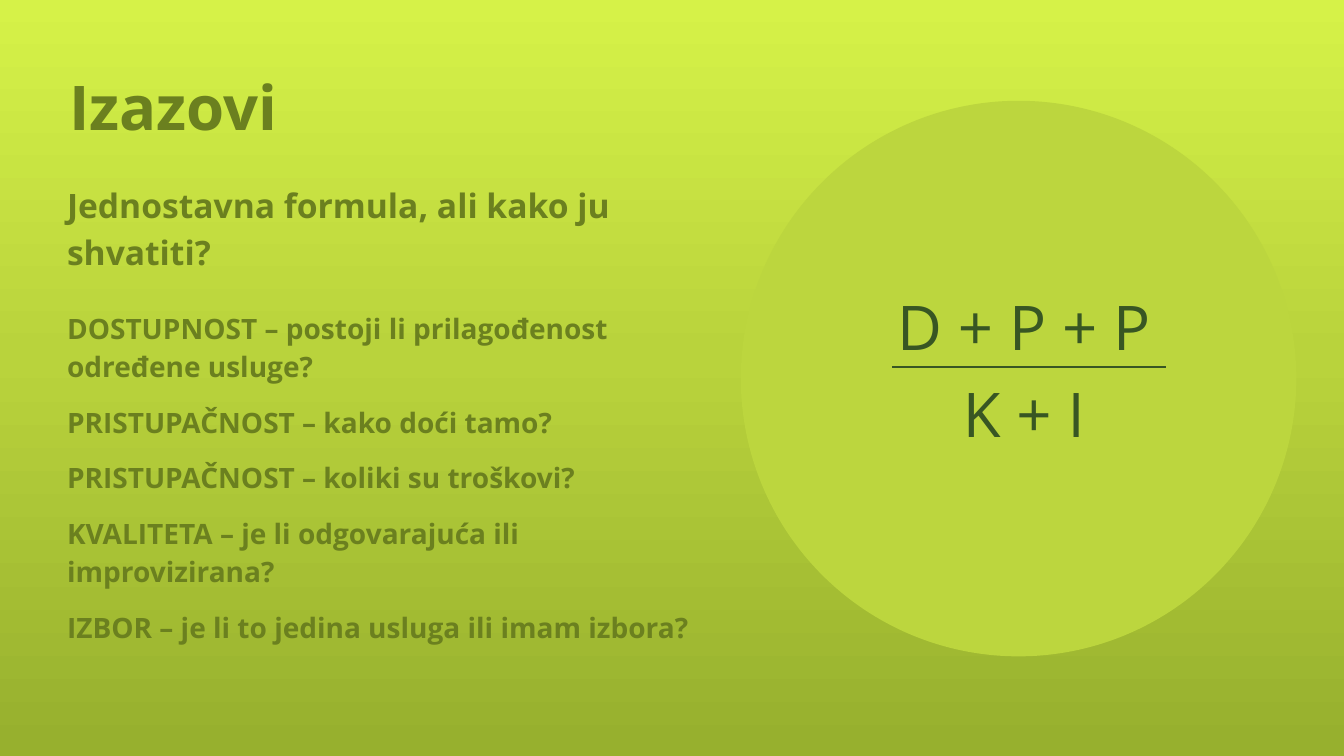
from copy import deepcopy
from dataclasses import dataclass

from lxml.etree import SubElement
from pptx import Presentation
from pptx.dml.color import RGBColor
from pptx.enum.shapes import MSO_CONNECTOR, MSO_SHAPE
from pptx.enum.text import MSO_AUTO_SIZE, PP_ALIGN
from pptx.oxml.ns import qn
from pptx.slide import Slide
from pptx.util import Cm, Pt


@dataclass(frozen=True)
class Theme:
    font: str = "Open Sans"
    olive: RGBColor = RGBColor(0x6B, 0x80, 0x1F)
    forest: RGBColor = RGBColor(0x38, 0x56, 0x23)
    disc: RGBColor = RGBColor(0xBC, 0xD6, 0x3E)
    gradient: tuple[tuple[float, str], ...] = (
        (0, "D6F248"), (0.47, "B9D33C"), (0.99, "97B02E"))
    display_size: int = 44
    question_size: int = 24
    criteria_size: int = 20


THEME = Theme()


@dataclass(frozen=True)
class TextBlock:
    left: float
    top: float
    width: float
    height: float
    lines: tuple[str, ...]
    size: int
    color: RGBColor = THEME.olive
    bold: bool = True
    body: bool = False
    align: PP_ALIGN = PP_ALIGN.LEFT


TITLE = TextBlock(1.5, 1.6, 30.5, 3.78, ("Izazovi",), THEME.display_size)
QUESTION = TextBlock(1.14, 4.39, 14.53, 2.54,
                     ("Jednostavna formula, ali kako ju shvatiti?",),
                     THEME.question_size, body=True)
CRITERIA = TextBlock(1.14, 7.59, 16.56, 8.79, (
    "DOSTUPNOST – postoji li prilagođenost određene usluge?",
    "PRISTUPAČNOST – kako doći tamo?",
    "PRISTUPAČNOST – koliki su troškovi?",
    "KVALITETA – je li odgovarajuća ili improvizirana?",
    "IZBOR – je li to jedina usluga ili imam izbora?",
), THEME.criteria_size, body=True)
NUMERATOR = TextBlock(21.79, 7.16, 8.03, 2.13, ("D + P + P",), THEME.display_size,
                      THEME.forest, bold=False, align=PP_ALIGN.CENTER)
DENOMINATOR = TextBlock(23.52, 9.35, 4.57, 2.13, ("K + I",), THEME.display_size,
                        THEME.forest, bold=False, align=PP_ALIGN.CENTER)


def paint_background(page: Slide) -> None:
    fill = page.background.fill
    fill.gradient()
    fill.gradient_angle = 270
    # The default gradient has two stops; add the middle one
    stop_list = page.element.find(".//" + qn("a:gsLst"))
    stop_list.append(deepcopy(stop_list[0]))
    for stop, (position, color) in zip(fill.gradient_stops, THEME.gradient):
        stop.position = position
        stop.color.rgb = RGBColor.from_string(color)


def add_text(page: Slide, block: TextBlock) -> None:
    box = page.shapes.add_textbox(Cm(block.left), Cm(block.top),
                                  Cm(block.width), Cm(block.height))
    frame = box.text_frame
    frame.word_wrap = True
    if block is not TITLE:
        frame.auto_size = MSO_AUTO_SIZE.SHAPE_TO_FIT_TEXT
    for index, line in enumerate(block.lines):
        para = frame.add_paragraph() if index else frame.paragraphs[0]
        para.alignment = block.align
        if block.body:
            para.line_spacing = 1.15
            para.space_after = Pt(12)
            para._p.get_or_add_pPr().set("marL", str(Cm(0.3)))
        span = para.add_run()
        span.text = line
        span.font.name = THEME.font
        span.font.size = Pt(block.size)
        span.font.bold = block.bold
        span.font.color.rgb = block.color


def add_disc(page: Slide) -> None:
    disc = page.shapes.add_shape(MSO_SHAPE.OVAL, Cm(18.67), Cm(2.54), Cm(14), Cm(14))
    disc.shadow.inherit = False
    disc.fill.solid()
    disc.fill.fore_color.rgb = THEME.disc
    disc.line.fill.background()


def add_fraction_bar(page: Slide) -> None:
    bar = page.shapes.add_connector(MSO_CONNECTOR.STRAIGHT,
                                    Cm(22.48), Cm(9.25), Cm(29.39), Cm(9.25))
    bar.line.color.rgb = THEME.forest
    bar.line.width = Pt(1.5)
    SubElement(bar._element.spPr, qn("a:effectLst"))


def main() -> None:
    deck = Presentation()
    deck.slide_width, deck.slide_height = Cm(33.87), Cm(19.05)
    page = deck.slides.add_slide(deck.slide_layouts[6])
    paint_background(page)

    # Title and opening question
    add_text(page, TITLE)
    add_text(page, QUESTION)

    # Disc, criteria and formula
    add_disc(page)
    for block in (CRITERIA, NUMERATOR, DENOMINATOR):
        add_text(page, block)
    add_fraction_bar(page)

    deck.save("out.pptx")


if __name__ == "__main__":
    main()
